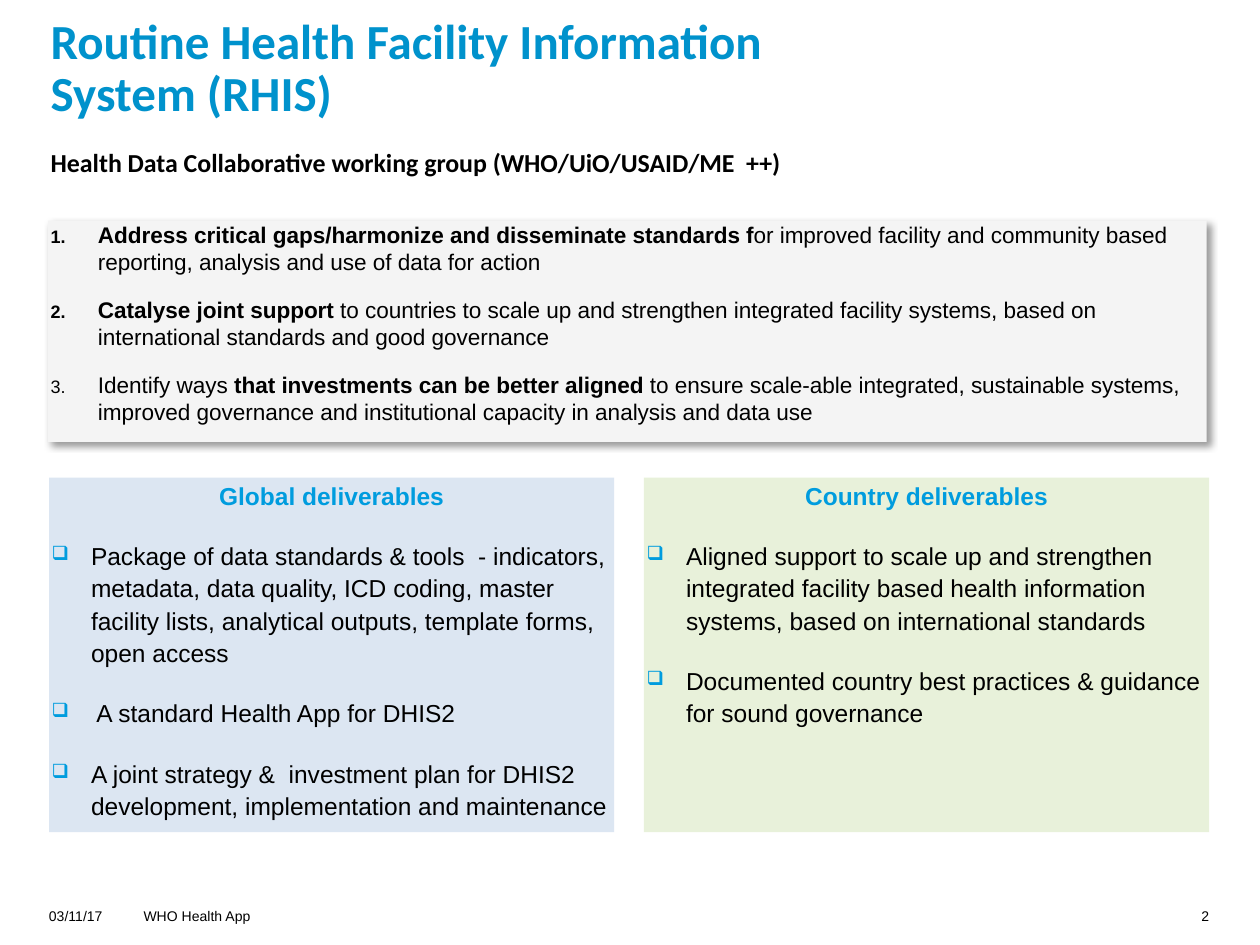
"""Build the routine health facility information system slide."""
from dataclasses import dataclass

from lxml import etree
from pptx import Presentation
from pptx.dml.color import RGBColor
from pptx.enum.shapes import MSO_SHAPE
from pptx.enum.text import MSO_ANCHOR, PP_ALIGN
from pptx.oxml.ns import qn
from pptx.util import Pt

RECTANGLE = MSO_SHAPE.RECTANGLE
TOP, MIDDLE, BOTTOM = MSO_ANCHOR.TOP, MSO_ANCHOR.MIDDLE, MSO_ANCHOR.BOTTOM
LEFT, CENTER, RIGHT = PP_ALIGN.LEFT, PP_ALIGN.CENTER, PP_ALIGN.RIGHT


@dataclass(frozen=True)
class Theme:
    """Colours, fonts and type sizes of the slide."""
    ink: str = "000000"
    title_blue: str = "0092CC"
    accent: str = "009CDE"
    aims_fill: str = "F4F4F4"
    global_fill: str = "DCE6F2"
    country_fill: str = "E8F1DA"
    body_font: str = "Arial"
    title_font: str = "Calibri"
    title_size: float = 28
    subtitle_size: float = 14.8
    aims_size: float = 12.9
    panel_size: float = 14
    footer_size: float = 8


AIMS = [
    [("Address critical gaps/harmonize and disseminate standards f", True),
     ("or improved facility and community based reporting, analysis and use of data for action", False)],
    [("Catalyse joint support", True),
     (" to countries to scale up and strengthen integrated facility systems, "
      "based on international standards and good governance", False)],
    [("Identify ways ", False),
     ("that investments can be better aligned", True),
     (" to ensure scale-able integrated, sustainable systems, improved governance "
      "and institutional capacity in analysis and data use", False)],
]
GLOBAL_ITEMS = [
    "Package of data standards & tools  - indicators, metadata, data quality, ICD coding, "
    "master facility lists, analytical outputs, template forms, open access",
    " A standard Health App for DHIS2",
    "A joint strategy &  investment plan for DHIS2 development, implementation and maintenance",
]
COUNTRY_ITEMS = [
    "Aligned support to scale up and strengthen integrated facility based health "
    "information systems, based on international standards",
    "Documented country best practices & guidance for sound governance",
]


class SlideBuilder:
    """Hold the theme and the current slide, and draw each kind of element."""

    def __init__(self, page, theme):
        """Keep the page and the theme."""
        self.page = page
        self.theme = theme

    def frame(self, shape, anchor=TOP, left=1.5, right=1.5):
        """Set the margins and anchor of a shape's text and return its frame."""
        frame = shape.text_frame
        values = {"word_wrap": True, "vertical_anchor": anchor, "margin_left": Pt(left),
                  "margin_right": Pt(right), "margin_top": 0, "margin_bottom": 0}
        for name, value in values.items():
            setattr(frame, name, value)
        return frame

    def text_box(self, area, anchor=TOP, left=1.5, right=1.5):
        """Add a text box and return its text frame."""
        box = self.page.shapes.add_textbox(*map(Pt, area))
        return self.frame(box, anchor, left, right)

    def rectangle(self, area, fill, shadow=False):
        """Add a filled rectangle and return its text frame."""
        box = self.page.shapes.add_shape(RECTANGLE, *map(Pt, area))
        box.fill.solid()
        box.fill.fore_color.rgb = RGBColor.from_string(fill)
        box.line.fill.background()
        box.shadow.inherit = False
        if shadow:
            self.cast_shadow(box)
        return self.frame(box)

    def cast_shadow(self, box):
        """Give a box a soft shadow to the lower right."""
        effects = box.element.spPr.find(qn("a:effectLst"))
        outer = etree.SubElement(effects, qn("a:outerShdw"), blurRad=str(Pt(4)),
                                 dist=str(Pt(3)), dir="2700000", algn="tl", rotWithShape="0")
        color = etree.SubElement(outer, qn("a:srgbClr"), val=self.theme.ink)
        etree.SubElement(color, qn("a:alpha"), val="40000")

    def paragraph(self, frame, spans, size, color=None, font=None, **layout):
        """Write a paragraph of (text, bold) spans, using the empty first one if there."""
        first = frame.paragraphs[0]
        para = frame.add_paragraph() if first.runs else first
        for name, value in {"alignment": LEFT, **layout}.items():
            setattr(para, name, value)
        if para is first:
            para.space_before = Pt(0)
        for text, bold in spans:
            span = para.add_run()
            span.text = text
            values = {"name": font or self.theme.body_font, "size": Pt(size), "bold": bold}
            for name, value in values.items():
                setattr(span.font, name, value)
            span.font.color.rgb = RGBColor.from_string(color or self.theme.ink)
        return para

    def bullet(self, para, indent, color, kind, **mark):
        """Give a paragraph a hanging bullet or number."""
        props = para._p.get_or_add_pPr()
        props.set("marL", str(Pt(indent)))
        props.set("indent", str(Pt(-indent)))
        tint = etree.SubElement(props, qn("a:buClr"))
        etree.SubElement(tint, qn("a:srgbClr"), val=color)
        etree.SubElement(props, qn("a:buSzPct"), val="80000")
        etree.SubElement(props, qn(kind), **mark)

    def aims(self, area):
        """Draw the numbered list of aims."""
        frame = self.rectangle(area, self.theme.aims_fill, shadow=True)
        for spans in AIMS:
            para = self.paragraph(frame, spans, self.theme.aims_size,
                                  space_before=Pt(6), space_after=Pt(6))
            self.bullet(para, 27, self.theme.ink, "a:buAutoNum", type="arabicPeriod")

    def panel(self, area, fill, heading, items):
        """Draw a coloured panel with a heading and a bulleted list."""
        theme = self.theme
        frame = self.rectangle(area, fill)
        layout = {"line_spacing": 1.1, "space_before": Pt(10), "space_after": Pt(6)}
        self.paragraph(frame, [(heading, True)], theme.panel_size, theme.accent,
                       alignment=CENTER, **layout)
        for item in items:
            para = self.paragraph(frame, [(item, False)], theme.panel_size, **layout)
            self.bullet(para, 22.5, theme.accent, "a:buChar", char="❑")

    def footer(self, left, width, text, alignment=LEFT):
        """Write one part of the footer."""
        frame = self.text_box((left, 518.4, width, 14.4), left=0, right=0)
        self.paragraph(frame, [(text, False)], self.theme.footer_size, alignment=alignment)


def main():
    """Build and save the slide."""
    theme = Theme()
    deck = Presentation()
    deck.slide_width, deck.slide_height = Pt(720), Pt(540)
    builder = SlideBuilder(deck.slides.add_slide(deck.slide_layouts[6]), theme)

    builder.footer(28, 47, "03/11/17")
    builder.footer(82, 134, "WHO Health App")
    builder.footer(674, 17, "2", RIGHT)

    title = builder.text_box((27.5, 13, 482, 57), BOTTOM, right=28)
    builder.paragraph(title, [("Routine Health Facility Information System (RHIS)", True)],
                      theme.title_size, theme.title_blue, theme.title_font, line_spacing=0.9)
    subtitle = builder.text_box((27.5, 80, 482, 23), MIDDLE)
    builder.paragraph(
        subtitle, [("Health Data Collaborative working group (WHO/UiO/USAID/ME  ++)", True)],
        theme.subtitle_size, font=theme.title_font, line_spacing=1.1, space_after=Pt(6))

    builder.aims((27.5, 126, 662, 126.5))
    panels = [(theme.global_fill, "Global deliverables", GLOBAL_ITEMS),
              (theme.country_fill, "Country deliverables", COUNTRY_ITEMS)]
    width, gap = 323, 17
    for column, content in enumerate(panels):
        builder.panel((28 + column * (width + gap), 273, width, 202.5), *content)

    deck.save("out.pptx")


if __name__ == "__main__":
    main()
